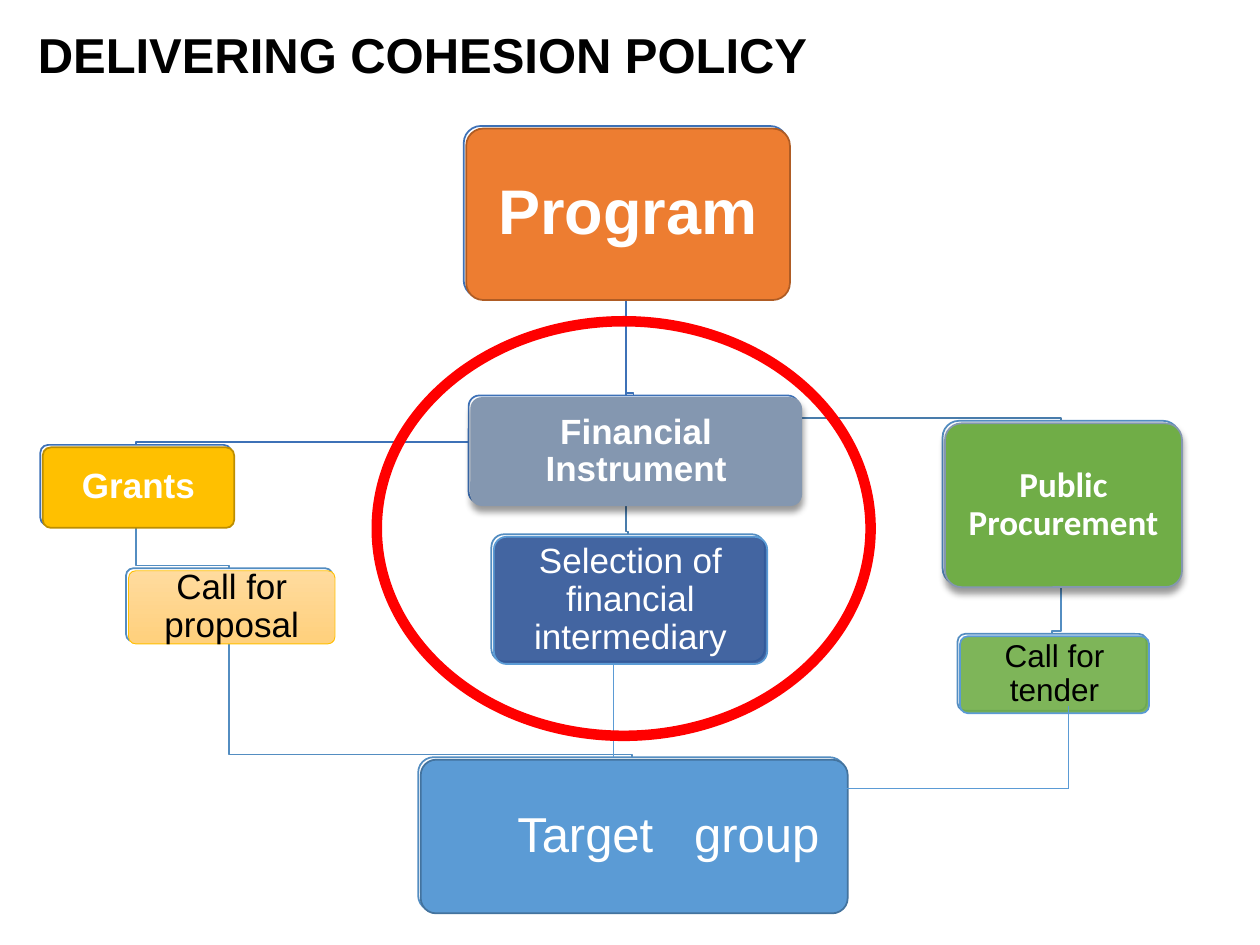
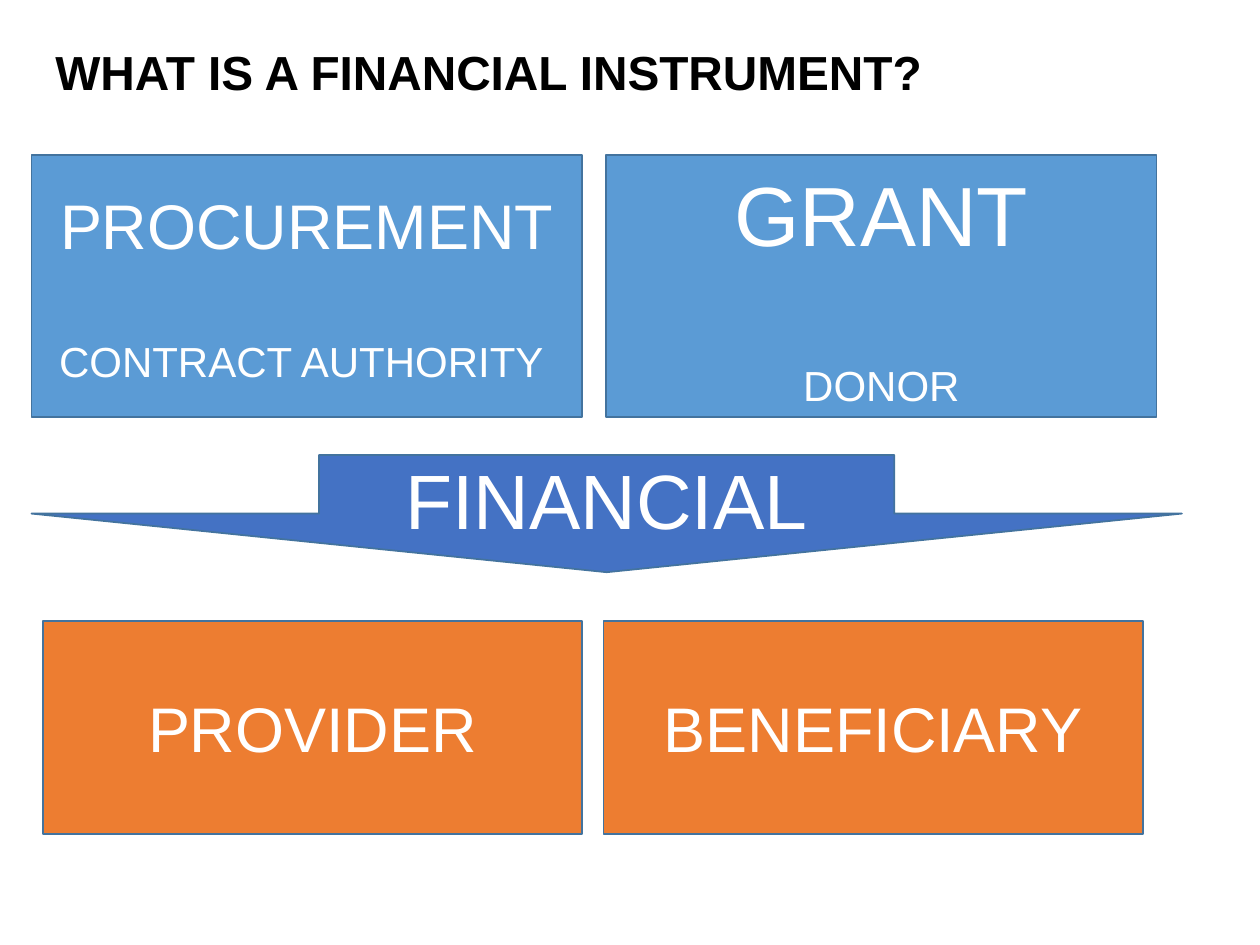
from dataclasses import dataclass
from typing import NamedTuple

from lxml import etree
from pptx import Presentation
from pptx.dml.color import RGBColor
from pptx.enum.shapes import MSO_CONNECTOR, MSO_SHAPE
from pptx.enum.text import MSO_ANCHOR, MSO_AUTO_SIZE, PP_ALIGN
from pptx.oxml.ns import qn
from pptx.util import Pt

RECTANGLE = MSO_SHAPE.RECTANGLE
ROUNDED = MSO_SHAPE.ROUNDED_RECTANGLE
OVAL = MSO_SHAPE.OVAL
DOWN_ARROW = MSO_SHAPE.DOWN_ARROW
STRAIGHT = MSO_CONNECTOR.STRAIGHT
CENTER = PP_ALIGN.CENTER
LEFT = PP_ALIGN.LEFT
TOP = MSO_ANCHOR.TOP
MIDDLE = MSO_ANCHOR.MIDDLE
NO_FIT = MSO_AUTO_SIZE.NONE

FONT = "Arial"
TITLE_ONLY = 5
PANEL_OFFSET = 1.44
ELBOW_RISE = 1.5
ARIAL_LINE = 1.15

COLORS = {
    "white": "FFFFFF", "black": "000000", "red": "FF0000",
    "orange": "ED7D31", "orange edge": "AF5C24",
    "gold": "FFC000", "gold edge": "BD8E00",
    "peach top": "FFDB9E", "peach bottom": "FFD07C",
    "sky": "5B9BD5", "sky edge": "43739E", "sky rim": "538DC1",
    "royal": "4472C4", "royal rim": "3D71B7", "steel rim": "497CAB",
    "slate": "8497B0", "navy": "2F5597", "green": "70AD47",
}


class Box(NamedTuple):
    """A rectangle in points."""
    left: float
    top: float
    width: float
    height: float

    @property
    def center(self):
        """Give the horizontal centre."""
        return self.left + self.width / 2

    @property
    def bottom(self):
        """Give the lower edge."""
        return self.top + self.height

    def points(self):
        """Give the four lengths for a shape call."""
        return [Pt(length) for length in self]


@dataclass
class Card:
    """One node of the delivery chart."""
    words: tuple
    box: Box
    fill: str
    edge: str
    rim: str = "sky rim"
    size: float = 20
    bold: bool = False
    ink: str = "white"
    font: str = FONT
    inset: float = 5.7
    indent: float = 0
    opacity: int = 100
    edge_width: float = 1
    raised: bool = False


CARDS = {
    "program": Card(("Program",), Box(265, 72, 185, 98), "orange", "orange edge",
                    rim="royal rim", size=36, bold=True, inset=10.8),
    "grants": Card(("Grants",), Box(23, 254.2, 109.4, 46), "gold", "gold edge",
                   rim="royal rim", bold=True),
    "proposal": Card(("Call for proposal",), Box(72, 324.7, 118, 41.8), "peach top", "gold",
                     ink="black", edge_width=0.5),
    "target": Card(("Target", " ", "group"), Box(239, 432.7, 244, 87.8), "sky", "sky edge",
                   size=28, inset=8.6, indent=38.9),
    "financial": Card(("Financial Instrument",), Box(267.8, 226, 188.6, 61.2), "slate", "slate",
                      rim="royal rim", bold=True, raised=True),
    "selection": Card(("Selection of financial intermediary",), Box(280.8, 305.3, 156.2, 72.7),
                      "navy", "sky", opacity=90),
    "procurement": Card(("Public Procurement",), Box(538.6, 240.5, 135.4, 93.6), "green", "slate",
                        bold=True, font="Calibri", inset=5, raised=True),
    "tender": Card(("Call for tender",), Box(547.2, 362.2, 108, 43.9), "green", "sky",
                   size=18, ink="black", inset=5, opacity=90),
}

ELBOWS = [
    ("procurement", "tender", "sky rim"),
    ("program", "procurement", "steel rim"),
    ("program", "selection", "steel rim"),
    ("program", "financial", "royal rim"),
    ("proposal", "target", "sky rim"),
    ("grants", "proposal", "sky rim"),
    ("program", "grants", "royal rim"),
]


def color(name):
    """Look up a palette colour."""
    return RGBColor.from_string(COLORS[name])


def style_span(span, size, ink="white", bold=False, font=FONT):
    """Format one run."""
    span.font.name = font
    span.font.size = Pt(size)
    span.font.bold = bold
    span.font.color.rgb = color(ink)


def style_shape(shape, fill, edge, edge_width=1):
    """Give a shape its fill and line, without a shadow."""
    shape.shadow.inherit = False
    if fill:
        shape.fill.solid()
        shape.fill.fore_color.rgb = color(fill)
    else:
        shape.fill.background()
    shape.line.color.rgb = color(edge)
    shape.line.width = Pt(edge_width)


def add_title(page, text, box, size):
    """Place and format the title placeholder."""
    title = page.shapes.title
    title.left, title.top, title.width, title.height = box.points()
    frame = title.text_frame
    frame.text = text
    frame.word_wrap = True
    frame.auto_size = NO_FIT
    frame.vertical_anchor = TOP
    para = frame.paragraphs[0]
    para.alignment = LEFT
    para.line_spacing = 0.9
    style_span(para.runs[0], size, "black", True)


def set_opacity(shape, percent):
    """Make a solid fill partly transparent."""
    tint = shape._element.spPr.find(qn("a:solidFill"))[0]
    etree.SubElement(tint, qn("a:alpha"), val=str(percent * 1000))


def add_drop_shadow(shape):
    """Add a soft shadow below a shape."""
    effects = shape._element.spPr.find(qn("a:effectLst"))
    shadow = etree.SubElement(effects, qn("a:outerShdw"), blurRad=str(Pt(4)), dist=str(Pt(3)),
                              dir="5400000", algn="ctr", rotWithShape="0")
    tint = etree.SubElement(shadow, qn("a:srgbClr"), val=COLORS["black"])
    etree.SubElement(tint, qn("a:alpha"), val="40000")


def add_elbow(page, parent, child, rim):
    """Draw a stepped line from the parent's bottom to the child's top."""
    turn = child.top - ELBOW_RISE
    corners = [(parent.center, turn), (child.center, turn), (child.center, child.top)]
    outline = page.shapes.build_freeform(Pt(parent.center), Pt(parent.bottom))
    outline.add_line_segments([(Pt(x), Pt(y)) for x, y in corners], close=False)
    style_shape(outline.convert_to_shape(), None, rim)


def add_card(page, card):
    """Draw a coloured card with its offset white panel."""
    front_box = card.box._replace(left=card.box.left + PANEL_OFFSET,
                                  top=card.box.top + PANEL_OFFSET)
    panel = page.shapes.add_shape(ROUNDED, *card.box.points())
    front = page.shapes.add_shape(ROUNDED, *front_box.points())
    style_shape(panel, "white", card.rim)
    style_shape(front, card.fill, card.edge, card.edge_width)
    for shape in (panel, front):
        shape.adjustments[0] = 0.1
    if card.opacity < 100:
        set_opacity(front, card.opacity)
    if card.raised:
        add_drop_shadow(front)
    frame = front.text_frame
    frame.word_wrap = True
    frame.vertical_anchor = MIDDLE
    frame.margin_left = Pt(card.inset + card.indent)
    frame.margin_right = frame.margin_top = frame.margin_bottom = Pt(card.inset)
    para = frame.paragraphs[0]
    para.alignment = CENTER
    para.line_spacing = 0.9
    for word in card.words:
        span = para.add_run()
        span.text = word
        style_span(span, card.size, card.ink, card.bold, card.font)
    return front


def add_line(page, start, end):
    """Draw a thin straight line between two points."""
    line = page.shapes.add_connector(STRAIGHT, *(Pt(length) for length in (*start, *end)))
    line.line.color.rgb = color("sky")
    line.line.width = Pt(0.5)
    etree.SubElement(line._element.spPr, qn("a:effectLst"))


def add_delivery_chart(page):
    """Draw the chart from the program down to the target group."""
    for parent, child, rim in ELBOWS:
        add_elbow(page, CARDS[parent].box, CARDS[child].box, rim)
    fronts = {name: add_card(page, card) for name, card in CARDS.items()}

    peach = fronts["proposal"].fill
    peach.gradient()
    peach.gradient_angle = 270
    for stop, name in zip(peach.gradient_stops, ("peach top", "peach bottom")):
        stop.color.rgb = color(name)
    gap = fronts["target"].text_frame.paragraphs[0].runs[1]
    gap.font._element.set("spc", "1556")

    corner = (610.6, 450.7)
    add_line(page, (corner[0], 403.2), corner)
    add_line(page, (350.6, 380.2), (350.6, CARDS["target"].box.top))
    add_line(page, corner, (455.8, corner[1]))
    ring = page.shapes.add_shape(OVAL, *Box(215.3, 183.6, 282.2, 236.9).points())
    style_shape(ring, None, "red", 6)


def add_block(page, kind, box, fill, lines):
    """Draw a filled shape whose lines stand one blank line apart."""
    shape = page.shapes.add_shape(kind, *box.points())
    style_shape(shape, fill, "sky edge")
    frame = shape.text_frame
    frame.word_wrap = True
    frame.vertical_anchor = MIDDLE
    for index, (text, size) in enumerate(lines):
        para = frame.add_paragraph() if index else frame.paragraphs[0]
        para.text = text
        para.alignment = CENTER
        if index:
            para.space_before = Pt(lines[index - 1][1] * ARIAL_LINE)
        style_span(para.runs[0], size)


def add_block_row(page, box, gap, fill, blocks):
    """Lay blocks of equal width across a box."""
    width = (box.width - gap * (len(blocks) - 1)) / len(blocks)
    for index, lines in enumerate(blocks):
        cell = box._replace(left=box.left + index * (width + gap), width=width)
        add_block(page, RECTANGLE, cell, fill, lines)


def add_comparison(page):
    """Draw the two rows of roles and the arrow between them."""
    add_block_row(page, Box(18, 88.6, 643, 149.8), 13.7, "sky", [
        [("PROCUREMENT", 36), ("CONTRACT AUTHORITY ", 24)],
        [("GRANT", 48), ("DONOR", 24)],
    ])
    add_block(page, DOWN_ARROW, Box(18, 260, 657.4, 67), "royal", [("FINANCIAL", 44)])
    add_block_row(page, Box(24.5, 355, 628.6, 121.7), 12.2, "orange", [
        [("PROVIDER", 36)],
        [("BENEFICIARY", 36)],
    ])


def main():
    """Build and save the deck."""
    deck = Presentation()
    deck.slide_width, deck.slide_height = Pt(720), Pt(540)
    layout = deck.slide_layouts[TITLE_ONLY]

    page = deck.slides.add_slide(layout)
    add_title(page, "DELIVERING COHESION POLICY", Box(14.4, 14.4, 681, 59), 28)
    add_delivery_chart(page)

    page = deck.slides.add_slide(layout)
    add_title(page, "WHAT IS A FINANCIAL INSTRUMENT?", Box(24.5, 24.5, 683.3, 68.4), 27.3)
    add_comparison(page)

    deck.save("out.pptx")


if __name__ == "__main__":
    main()
